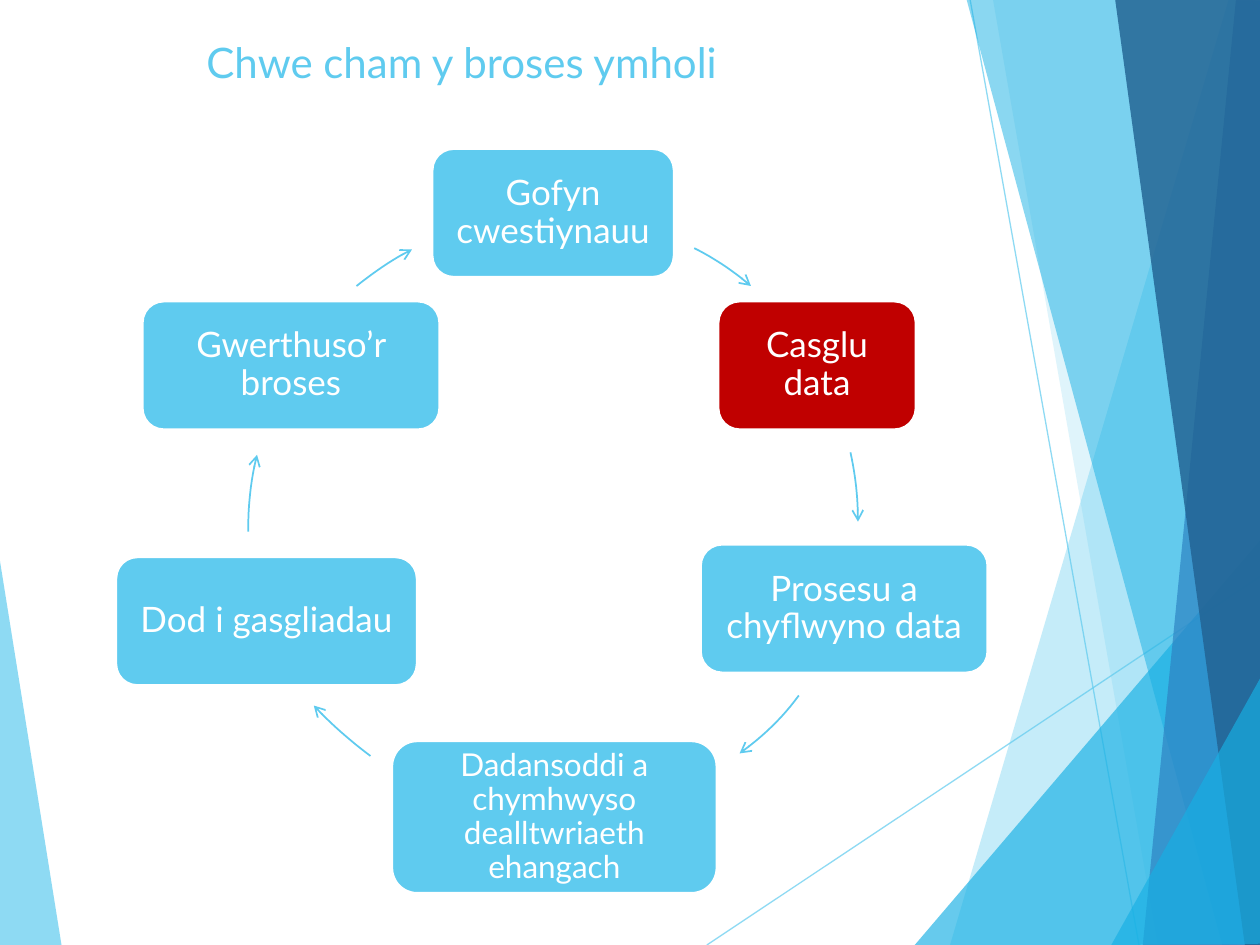
from pptx import Presentation
from pptx.dml.color import RGBColor as Rgb
from pptx.enum.shapes import MSO_CONNECTOR as Link, MSO_SHAPE as Kind
from pptx.enum.text import MSO_ANCHOR as Anchor, PP_ALIGN as Align
from pptx.oxml.ns import qn
from pptx.util import Inches, Pt
from lxml.etree import SubElement as Sub

THEME = dict(
    font="Lato", sky="5FCBEF", cyan="17B0E4", blue="2E83C3", navy="226292",
    red="C00000", white="FFFFFF", title=24, body=20, small=18,
)
TITLE = "Chwe cham y broses ymholi"

# Text, left, top, width, height, fill, type size
STEPS = [
    ("Gofyn cwestiynauu", 3.43, 1.18, 1.92, 1.02, "sky", "body"),
    ("Casglu data", 5.7, 2.39, 1.57, 1.02, "red", "body"),
    ("Prosesu a chyflwyno data", 5.56, 4.32, 2.28, 1.02, "sky", "body"),
    ("Dadansoddi a chymhwyso dealltwriaeth ehangach",
     3.11, 5.88, 2.58, 1.21, "sky", "small"),
    ("Dod i gasgliadau", 0.92, 4.42, 2.39, 1.02, "sky", "body"),
    ("Gwerthuso’r broses", 1.13, 2.39, 2.36, 1.02, "sky", "body"),
]

# Bezier points of the arrow that follows each step
ARROWS = [
    [(5.51, 1.97), (5.67, 2.05), (5.82, 2.15), (5.96, 2.27)],
    [(6.75, 3.59), (6.79, 3.77), (6.81, 3.95), (6.81, 4.14)],
    [(6.34, 5.52), (6.21, 5.7), (6.05, 5.85), (5.87, 5.98)],
    [(2.94, 6), (2.78, 5.88), (2.63, 5.75), (2.49, 5.6)],
    [(1.97, 4.22), (1.97, 4.01), (1.99, 3.81), (2.04, 3.61)],
    [(2.83, 2.27), (2.97, 2.16), (3.11, 2.06), (3.27, 1.98)],
]

# Corners, colour, opacity in percent
WEDGE = ([(-0.01, 4.39), (0.49, 7.51), (-0.01, 7.5)], "sky", 70)
RAYS = [((5.61, 7.5), (10.01, 4.57)), ((7.7, 0), (9.04, 7.5))]
FACETS = [
    ([(9.75, 0), (7.54, 7.5), (10.02, 7.51), (10.01, 0.01)], "sky", 36),
    ([(7.88, -0.01), (9.19, 7.5), (10.01, 7.5), (10.01, -0.01)], "sky", 20),
    ([(7.26, 7.5), (10, 4.29), (10.01, 7.5)], "cyan", 66),
    ([(7.67, -0.01), (9.7, 7.5), (10.01, 7.49), (10.01, -0.01)], "cyan", 50),
    ([(9.81, -0.01), (9.07, 7.5), (10.01, 7.5), (10, -0.01)], "blue", 70),
    ([(8.85, -0.01), (9.88, 7.5), (10.02, 7.5), (10, -0.01)], "navy", 82),
    ([(8.82, 7.5), (10.02, 5.35), (10.02, 7.49)], "cyan", 66),
]


def tint(name):
    return Rgb.from_string(THEME[name])


def fade(shape, alpha):
    for node in shape._element.spPr.iter(qn("a:srgbClr")):
        Sub(node, qn("a:alpha"), val=str(alpha * 1000))


def trace(shapes, points, close):
    spots = [(Inches(x), Inches(y)) for x, y in points]
    pen = shapes.build_freeform(*spots[0])
    pen.add_line_segments(spots[1:], close=close)
    shape = pen.convert_to_shape()
    shape.shadow.inherit = False
    return shape


def add_facet(shapes, points, color, alpha):
    shape = trace(shapes, points, True)
    shape.fill.solid()
    shape.fill.fore_color.rgb = tint(color)
    shape.line.fill.background()
    fade(shape, alpha)


def add_ray(shapes, start, end):
    ends = [Inches(n) for n in start + end]
    ray = shapes.add_connector(Link.STRAIGHT, *ends)
    ray.line.color.rgb = tint("sky")
    ray.line.width = Pt(0.75)
    fade(ray, 70)
    Sub(ray._element.spPr, qn("a:effectLst"))


def bend(a, b, c, d, count=12):
    """Return points along a cubic Bezier curve."""
    steps = [i / count for i in range(count + 1)]
    return [tuple((1 - t) ** 3 * p + 3 * (1 - t) ** 2 * t * q
                  + 3 * (1 - t) * t ** 2 * r + t ** 3 * s
                  for p, q, r, s in zip(a, b, c, d)) for t in steps]


def add_arrow(shapes, points):
    arrow = trace(shapes, bend(*points), False)
    arrow.fill.background()
    arrow.line.color.rgb = tint("sky")
    arrow.line.width = Pt(1)
    Sub(arrow.line._get_or_add_ln(), qn("a:tailEnd"), type="arrow")


def write(shape, text, size, color, align=Align.LEFT, anchor=Anchor.TOP,
          inset=None, space=None):
    frame = shape.text_frame
    frame.word_wrap = True
    frame.vertical_anchor = anchor
    if inset is not None:
        frame.margin_left = frame.margin_right = Inches(inset)
        frame.margin_top = frame.margin_bottom = Inches(inset)
    para = frame.paragraphs[0]
    para.alignment = align
    para.line_spacing = space
    run = para.add_run()
    run.text = text
    run.font.name = THEME["font"]
    run.font.size = Pt(THEME[size])
    run.font.color.rgb = tint(color)


def add_step(shapes, text, left, top, width, height, fill, size):
    place = [Inches(n) for n in (left, top, width, height)]
    box = shapes.add_shape(Kind.ROUNDED_RECTANGLE, *place)
    box.shadow.inherit = False
    box.fill.solid()
    box.fill.fore_color.rgb = tint(fill)
    box.line.color.rgb = tint("white")
    box.line.width = Pt(1.5)
    write(box, text, size, "white", align=Align.CENTER, anchor=Anchor.MIDDLE,
          inset=0.07 if size == "small" else 0.08, space=0.9)


def main():
    deck = Presentation()
    deck.slide_width, deck.slide_height = Inches(10), Inches(7.5)
    shapes = deck.slides.add_slide(deck.slide_layouts[6]).shapes

    add_facet(shapes, *WEDGE)
    for ray in RAYS:
        add_ray(shapes, *ray)
    for facet in FACETS:
        add_facet(shapes, *facet)
    for step, arrow in zip(STEPS, ARROWS):
        add_step(shapes, *step)
        add_arrow(shapes, arrow)

    place = [Inches(n) for n in (1.54, 0.24, 6.94, 1.44)]
    write(shapes.add_textbox(*place), TITLE, "title", "sky")
    deck.save("out.pptx")


if __name__ == "__main__":
    main()
